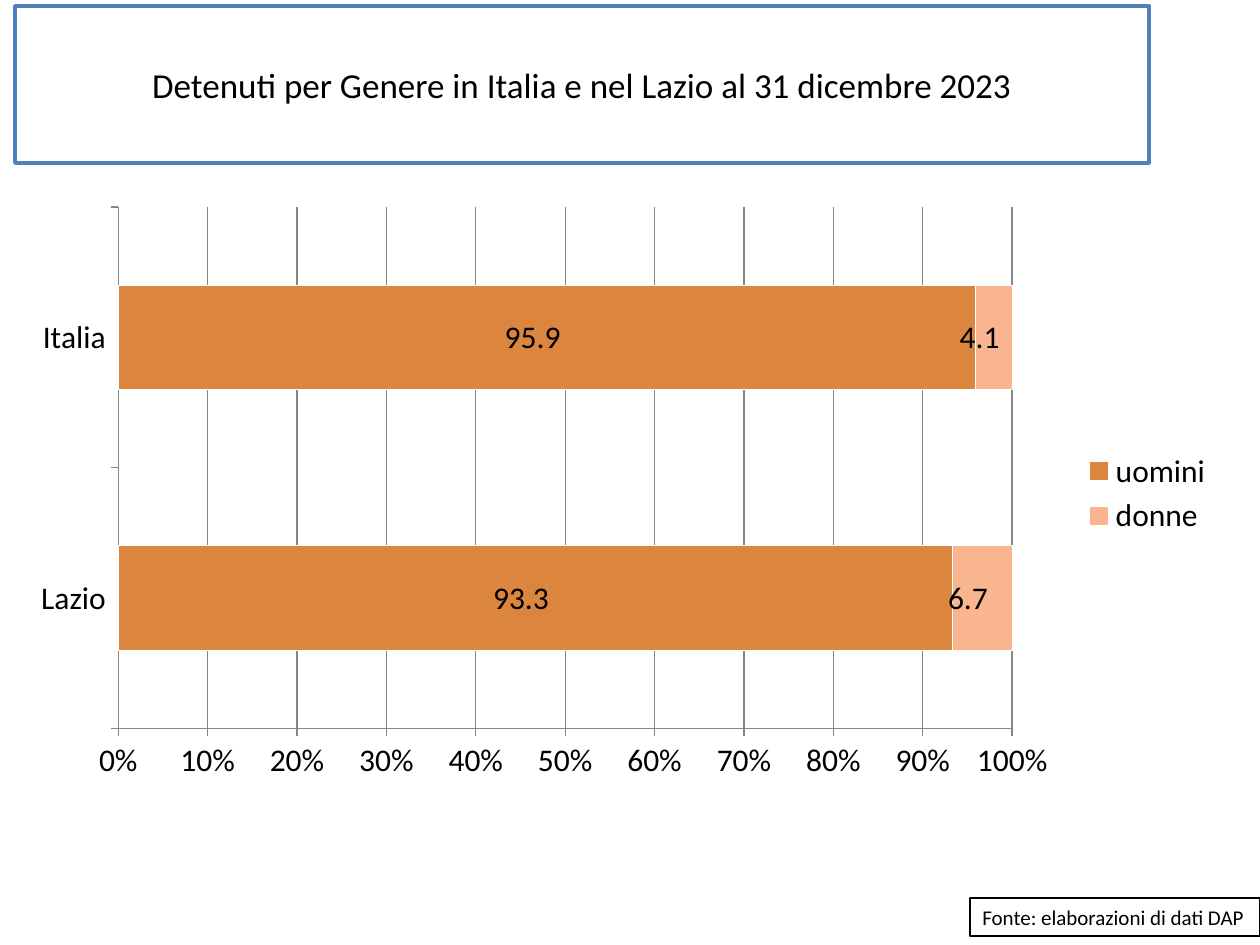
from lxml import etree
from pptx import Presentation
from pptx import util as u
from pptx.chart.data import CategoryChartData
from pptx.dml.color import RGBColor
from pptx.enum import chart as ch, text
from pptx.oxml.ns import qn

PX = 914400 / 126
BLACK = RGBColor(0x00, 0x00, 0x00)
WHITE = RGBColor(0xFF, 0xFF, 0xFF)
BLUE = RGBColor(0x4F, 0x81, 0xBD)
GREY = RGBColor(0x86, 0x86, 0x86)
ORANGE = RGBColor(0xDC, 0x85, 0x3E)
PEACH = RGBColor(0xF9, 0xB5, 0x90)


def px(*lengths):
    return [u.Emu(round(length * PX)) for length in lengths]


def fill_box(box, wording, size, line_color, line_width):
    box.fill.solid()
    box.fill.fore_color.rgb = WHITE
    box.line.color.rgb = line_color
    box.line.width = u.Pt(line_width)
    box.text_frame.text = wording
    font = box.text_frame.paragraphs[0].runs[0].font
    font.name, font.size, font.color.rgb = "Calibri", u.Pt(size), BLACK


deck = Presentation()
deck.slide_width, deck.slide_height = px(1260, 945)
slide = deck.slides.add_slide(deck.slide_layouts[5])

# Title
title = slide.shapes.title
title.left, title.top, title.width, title.height = px(15, 6, 1134, 157)
fill_box(title, "Detenuti per Genere in Italia e nel Lazio al 31 dicembre 2023", 20, BLUE, 2)
title.text_frame.vertical_anchor = text.MSO_ANCHOR.MIDDLE
title.text_frame.paragraphs[0].alignment = text.PP_ALIGN.CENTER

# Source note
source = slide.shapes.add_textbox(*px(970, 898, 290, 38))
fill_box(source, "Fonte: elaborazioni di dati DAP", 12, BLACK, 0.75)
source.text_frame.word_wrap = False
source.text_frame.auto_size = text.MSO_AUTO_SIZE.SHAPE_TO_FIT_TEXT

# Share of men and women
shares = CategoryChartData()
shares.categories = ["Lazio", "Italia"]
shares.add_series("uomini", (93.3, 95.9))
shares.add_series("donne", (6.7, 4.1))
chart = slide.shapes.add_chart(
    ch.XL_CHART_TYPE.BAR_STACKED_100, *px(18, 195, 1208, 597), shares).chart
chart.has_title = False
chart.font.name, chart.font.size, chart.font.color.rgb = "Calibri", u.Pt(18), BLACK
chart.has_legend = True
chart.legend.position = ch.XL_LEGEND_POSITION.RIGHT
chart.legend.include_in_layout = False

bars = chart.plots[0]
bars.gap_width, bars.overlap = 150, 100
bars.vary_by_categories = False
for gender, color in zip(bars.series, (ORANGE, PEACH)):
    gender.format.fill.solid()
    gender.format.fill.fore_color.rgb = color
    gender.format.line.color.rgb = WHITE
    labels = gender.data_labels
    labels.show_value = True
    labels.position = ch.XL_LABEL_POSITION.CENTER
    labels.number_format = r"#,##0.0\ _€_-"
    labels.number_format_is_linked = False

percent = chart.value_axis
percent.minimum_scale = 0
percent.has_major_gridlines = True
percent.major_gridlines.format.line.color.rgb = GREY
percent.tick_labels.number_format = "0%"
percent.tick_labels.number_format_is_linked = False
for axis in (percent, chart.category_axis):
    axis.format.line.color.rgb = GREY
    axis.major_tick_mark = ch.XL_TICK_MARK.OUTSIDE
    axis.minor_tick_mark = ch.XL_TICK_MARK.NONE

# Fixed place of the plot inside the chart, as fractions of its size
plot_area = bars._element.getparent()
for old_layout in plot_area.findall(qn("c:layout")):
    plot_area.remove(old_layout)
layout = etree.Element(qn("c:layout"))
manual = etree.SubElement(layout, qn("c:manualLayout"))
for tag, value in (("layoutTarget", "inner"), ("xMode", "edge"), ("yMode", "edge"),
                   ("x", 0.083), ("y", 0.02), ("w", 0.74), ("h", 0.874)):
    etree.SubElement(manual, qn(f"c:{tag}")).set("val", str(value))
plot_area.insert(0, layout)

deck.save("out.pptx")
